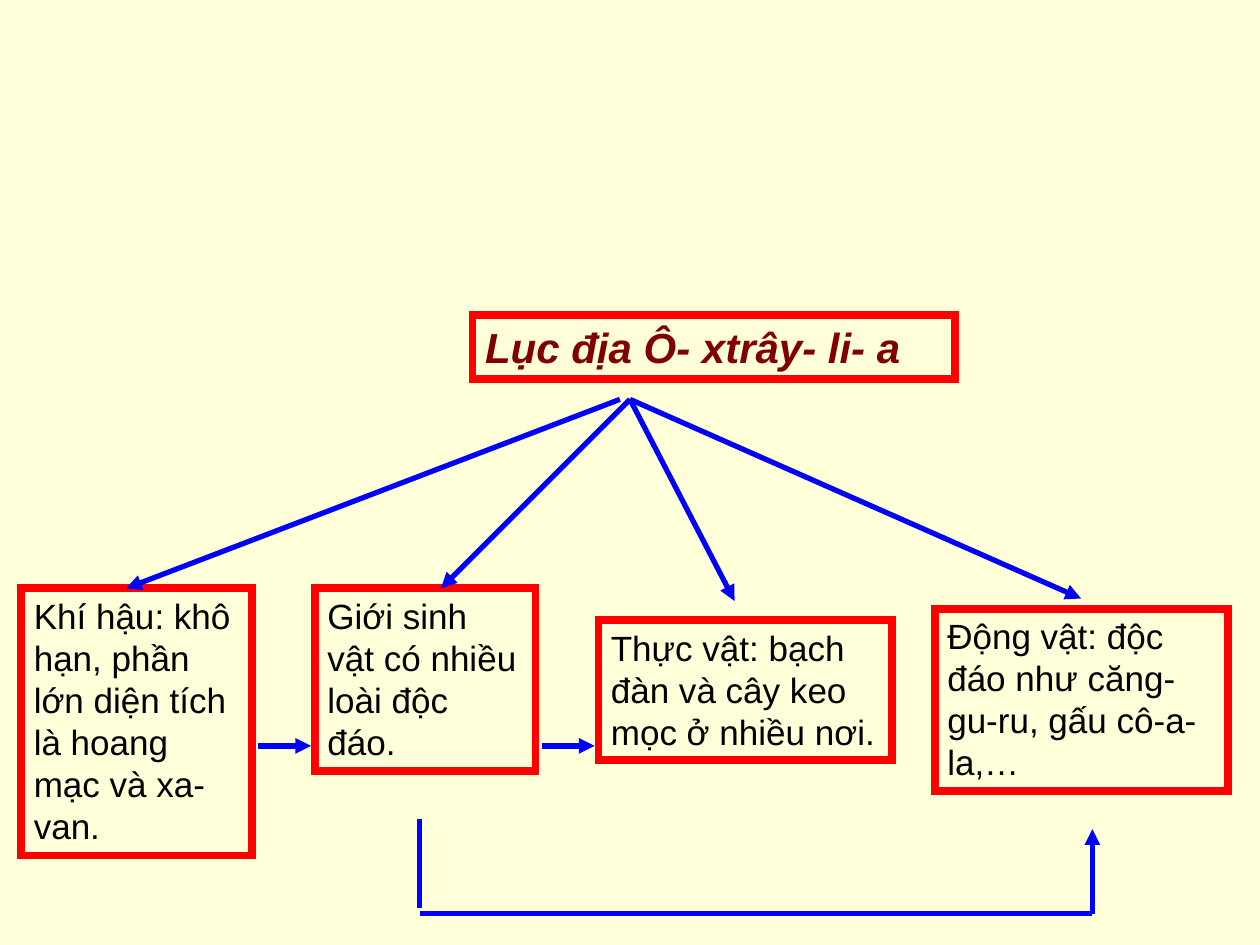
from lxml.etree import SubElement
from pptx import Presentation
from pptx.dml.color import RGBColor
from pptx.enum.shapes import MSO_CONNECTOR as Connector
from pptx.enum.text import MSO_ANCHOR as Anchor, MSO_AUTO_SIZE as AutoSize, PP_ALIGN as Align
from pptx.oxml.ns import qn
from pptx.util import Inches, Pt

CREAM = RGBColor(0xFF, 0xFF, 0xD9)
RED = RGBColor(0xFF, 0x00, 0x00)
MAROON = RGBColor(0x80, 0x00, 0x00)
BLACK = RGBColor(0x00, 0x00, 0x00)
BLUE = RGBColor(0x00, 0x00, 0xFF)

FACTS = [
    ((0.17, 4.67, 1.83, 2.12), "Khí hậu: khô hạn, phần lớn diện tích là hoang mạc và xa-van."),
    ((2.5, 4.67, 1.75, 1.45), "Giới sinh vật có nhiều loài độc đáo."),
    ((4.75, 4.92, 2.33, 1.11), "Thực vật: bạch đàn và cây keo mọc ở nhiều nơi."),
    ((7.42, 4.83, 2.33, 1.45), "Động vật: độc đáo như căng-gu-ru, gấu cô-a-la,…"),
]
BRANCHES = [
    ((4.92, 3.17), (1, 4.67)),
    ((5, 3.17), (3.5, 4.67)),
    ((5, 3.17), (5.83, 4.77)),
    ((5, 3.17), (8.58, 4.75)),
]
LINK_STARTS = [2.05, 4.3]
LINK_LENGTH, LINK_TOP = 0.42, 5.92
DETOUR_LEFT, DETOUR_RIGHT, DETOUR_BOTTOM = 3.33, 8.67, 7.25


class ConceptMap:
    """Draws red-framed boxes and blue arrows on one slide."""

    font_name = "Arial"

    def __init__(self, presentation):
        self.slide = presentation.slides.add_slide(presentation.slide_layouts[5])
        fill = self.slide.background.fill
        fill.solid()
        fill.fore_color.rgb = CREAM

    def stroke(self, shape, color, width):
        shape.line.color.rgb = color
        shape.line.width = Pt(width)
        return shape._element.spPr.find(qn("a:ln"))

    def frame(self, shape, text, size, color, auto_size, emphasis=False):
        outline = self.stroke(shape, RED, 4.5)
        SubElement(outline, qn("a:miter"), lim="800000")
        text_frame = shape.text_frame
        text_frame.word_wrap = True
        text_frame.auto_size = auto_size
        text_frame.vertical_anchor = Anchor.TOP
        paragraph = text_frame.paragraphs[0]
        paragraph.alignment = Align.LEFT
        paragraph.space_before = Pt(0)
        run = paragraph.add_run()
        run.text = text
        font = run.font
        font.name = self.font_name
        font.size = Pt(size)
        font.bold = font.italic = emphasis
        font.color.rgb = color

    def title(self, box, text):
        shape = self.slide.shapes.title
        shape.left, shape.top, shape.width, shape.height = map(Inches, box)
        self.frame(shape, text, 24, MAROON, AutoSize.NONE, emphasis=True)

    def fact(self, box, text):
        shape = self.slide.shapes.add_textbox(*map(Inches, box))
        self.frame(shape, text, 20, BLACK, AutoSize.SHAPE_TO_FIT_TEXT)

    def line(self, start, end, arrow=True):
        connector = self.slide.shapes.add_connector(
            Connector.STRAIGHT, *map(Inches, (*start, *end)))
        outline = self.stroke(connector, BLUE, 3)
        if arrow:
            SubElement(outline, qn("a:tailEnd"), type="triangle")
        SubElement(connector._element.spPr, qn("a:effectLst"))


def main():
    presentation = Presentation()
    presentation.slide_width, presentation.slide_height = Inches(10), Inches(7.5)
    concept_map = ConceptMap(presentation)
    concept_map.title((3.75, 2.5, 3.83, 0.51), "Lục địa Ô- xtrây- li- a")
    for box, text in FACTS:
        concept_map.fact(box, text)
    for start, end in BRANCHES:
        concept_map.line(start, end)
    for left in LINK_STARTS:
        concept_map.line((left, LINK_TOP), (left + LINK_LENGTH, LINK_TOP))
    concept_map.line((DETOUR_LEFT, 6.5), (DETOUR_LEFT, 7.21), arrow=False)
    concept_map.line((DETOUR_LEFT, DETOUR_BOTTOM), (DETOUR_RIGHT, DETOUR_BOTTOM), arrow=False)
    concept_map.line((DETOUR_RIGHT, DETOUR_BOTTOM), (DETOUR_RIGHT, 6.58))
    presentation.save("out.pptx")


if __name__ == "__main__":
    main()
